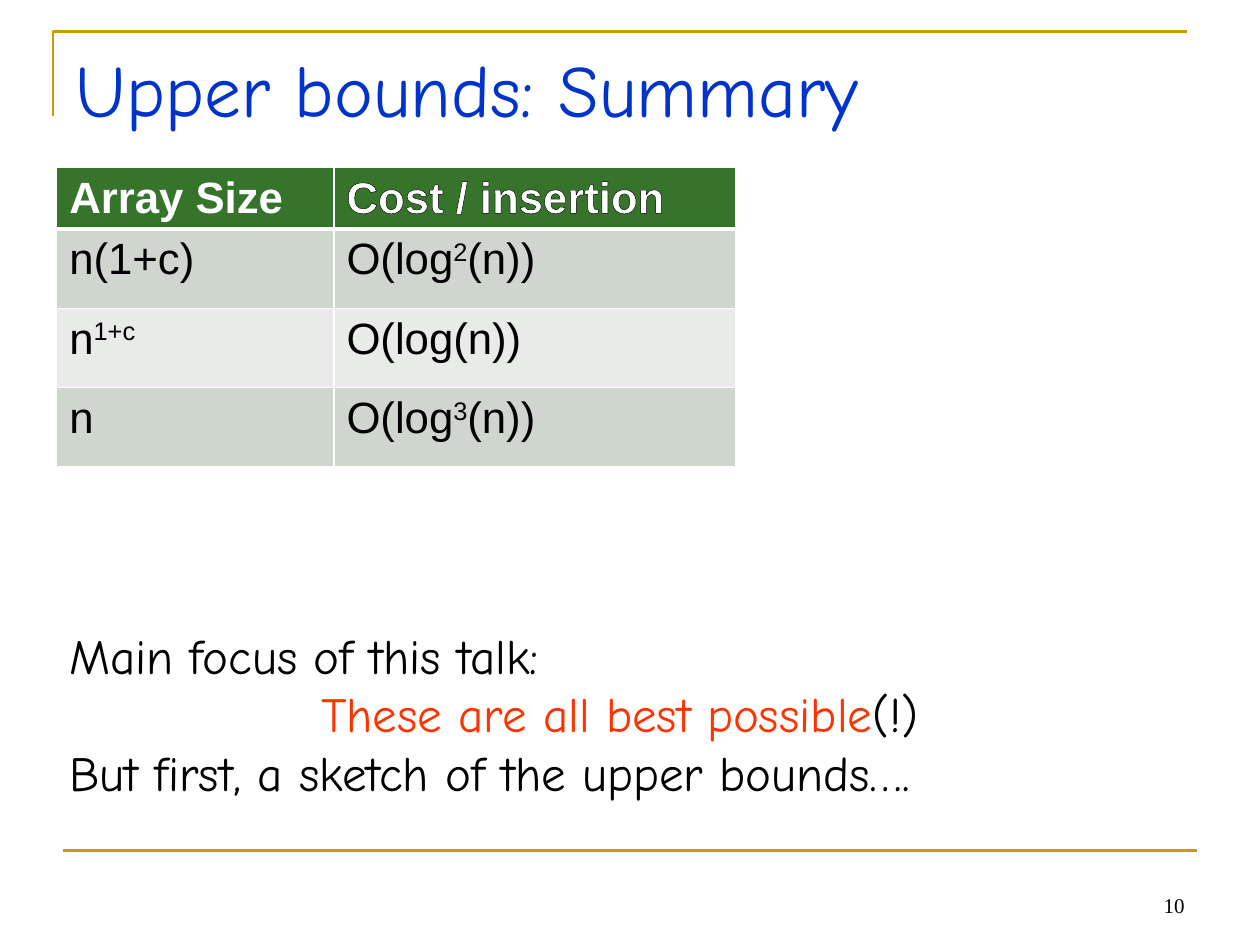
from pptx import Presentation
from pptx.dml.color import RGBColor as Color
from pptx.enum.shapes import MSO_CONNECTOR as Connector
from pptx.enum.text import MSO_ANCHOR as Anchor, PP_ALIGN as Align
from pptx.oxml import parse_xml
from pptx.oxml.ns import nsdecls
from pptx.util import Inches, Pt

THEME = {
    "gold": "CC9900", "blue": "0033CC", "red": "FF3300", "black": "000000",
    "white": "FFFFFF", "header": "35742A", "bands": ["CED6CD", "E8EBE8"],
    "title": {"name": "Comic Neue", "size": Pt(42), "bold": False},
    "body": {"name": "Comic Neue", "size": Pt(28), "bold": False},
    "header_cell": {"name": "Arial", "size": Pt(25), "bold": True},
    "cell": {"name": "Arial", "size": Pt(25), "bold": False},
    "number": {"name": "Times New Roman", "size": Pt(12), "bold": False},
}


def add_run(paragraph, text, style, color, raised=False):
    run = paragraph.add_run()
    run.text = text
    for name, value in THEME[style].items():
        setattr(run.font, name, value)
    run.font.color.rgb = Color.from_string(THEME[color])
    if raised:
        run.font._element.set("baseline", "30000")
    return run


def line_xml(tag, color, points):
    return parse_xml(
        f'<a:{tag} {nsdecls("a")} w="{Pt(points)}"><a:solidFill>'
        f'<a:srgbClr val="{color}"/></a:solidFill></a:{tag}>')


presentation = Presentation()
presentation.slide_width, presentation.slide_height = Inches(10), Inches(7.5)
slide = presentation.slides.add_slide(presentation.slide_layouts[5])
shapes = slide.shapes

builder = shapes.build_freeform(Inches(0.42), Inches(0.92), scale=1.0)
builder.add_line_segments(
    [(Inches(0.42), Inches(0.25)), (Inches(9.42), Inches(0.25))], close=False)
corner = builder.convert_to_shape()
corner.shadow.inherit = False
corner.fill.background()
footer_rule = shapes.add_connector(
    Connector.STRAIGHT, Inches(0.5), Inches(6.75), Inches(9.5), Inches(6.75))
footer_rule._element.spPr.append(parse_xml(f'<a:effectLst {nsdecls("a")}/>'))
for rule in (corner, footer_rule):
    rule.line.color.rgb = Color.from_string(THEME["gold"])
    rule.line.width = Pt(1.5)

title = shapes.title
title_box = {"left": 0.5, "top": 0.3, "width": 9, "height": 1.25}
for name, value in title_box.items():
    setattr(title, name, Inches(value))
title.text_frame.vertical_anchor = Anchor.TOP
title.text_frame.paragraphs[0].alignment = Align.LEFT
add_run(title.text_frame.paragraphs[0], "Upper bounds: Summary", "title", "blue")

rows = [
    [["Array Size"], ["Cost / insertion"]],
    [["n(1+c)"], ["O(log", "2", "(n))"]],
    [["n", "1+c"], ["O(log(n))"]],
    [["n"], ["O(log", "3", "(n))"]],
]
row_heights = [0.48] + [0.63] * 3
table = shapes.add_table(
    len(rows), 2, Inches(0.45), Inches(1.33), Inches(5.39), Inches(sum(row_heights))).table
for column, width in zip(table.columns, [2.2, 3.19]):
    column.width = Inches(width)
for row_index, (row, height) in enumerate(zip(rows, row_heights)):
    table.rows[row_index].height = Inches(height)
    is_header = row_index == 0
    for column_index, parts in enumerate(row):
        cell = table.cell(row_index, column_index)
        for part_index, part in enumerate(parts):
            run = add_run(cell.text_frame.paragraphs[0], part,
                          "header_cell" if is_header else "cell",
                          "white" if is_header else "black", part_index == 1)
            if is_header and column_index == 1:
                run.font._element.insert(0, line_xml("ln", THEME["black"], 0.75))
        properties = cell._tc.get_or_add_tcPr()
        for side in ("lnL", "lnR", "lnT", "lnB"):
            heavy = (is_header and side == "lnB") or (row_index == 1 and side == "lnT")
            properties.append(line_xml(side, THEME["white"], 3 if heavy else 1))
        cell.fill.solid()
        fill = THEME["header"] if is_header else THEME["bands"][(row_index - 1) % 2]
        cell.fill.fore_color.rgb = Color.from_string(fill)

focus = shapes.add_textbox(Inches(0.45), Inches(4.42), Inches(9.29), Inches(1.99)).text_frame
focus.word_wrap = True
focus.vertical_anchor = Anchor.BOTTOM
focus_lines = [
    (0, [("Main focus of this talk:", "black")]),
    (2, [("These are all best possible", "red"), ("(!)", "black")]),
    (0, [("But first, a sketch of the upper bounds….", "black")]),
]
for index, (indent, parts) in enumerate(focus_lines):
    paragraph = focus.add_paragraph() if index else focus.paragraphs[0]
    paragraph._p.get_or_add_pPr().set("marL", str(Inches(indent)))
    for text, color in parts:
        add_run(paragraph, text, "body", color)

number = shapes.add_textbox(Inches(7.17), Inches(6.83), Inches(2.33), Inches(0.5)).text_frame
number.vertical_anchor = Anchor.BOTTOM
number.word_wrap = True
number.paragraphs[0].alignment = Align.RIGHT
add_run(number.paragraphs[0], "10", "number", "black")

presentation.save("out.pptx")
